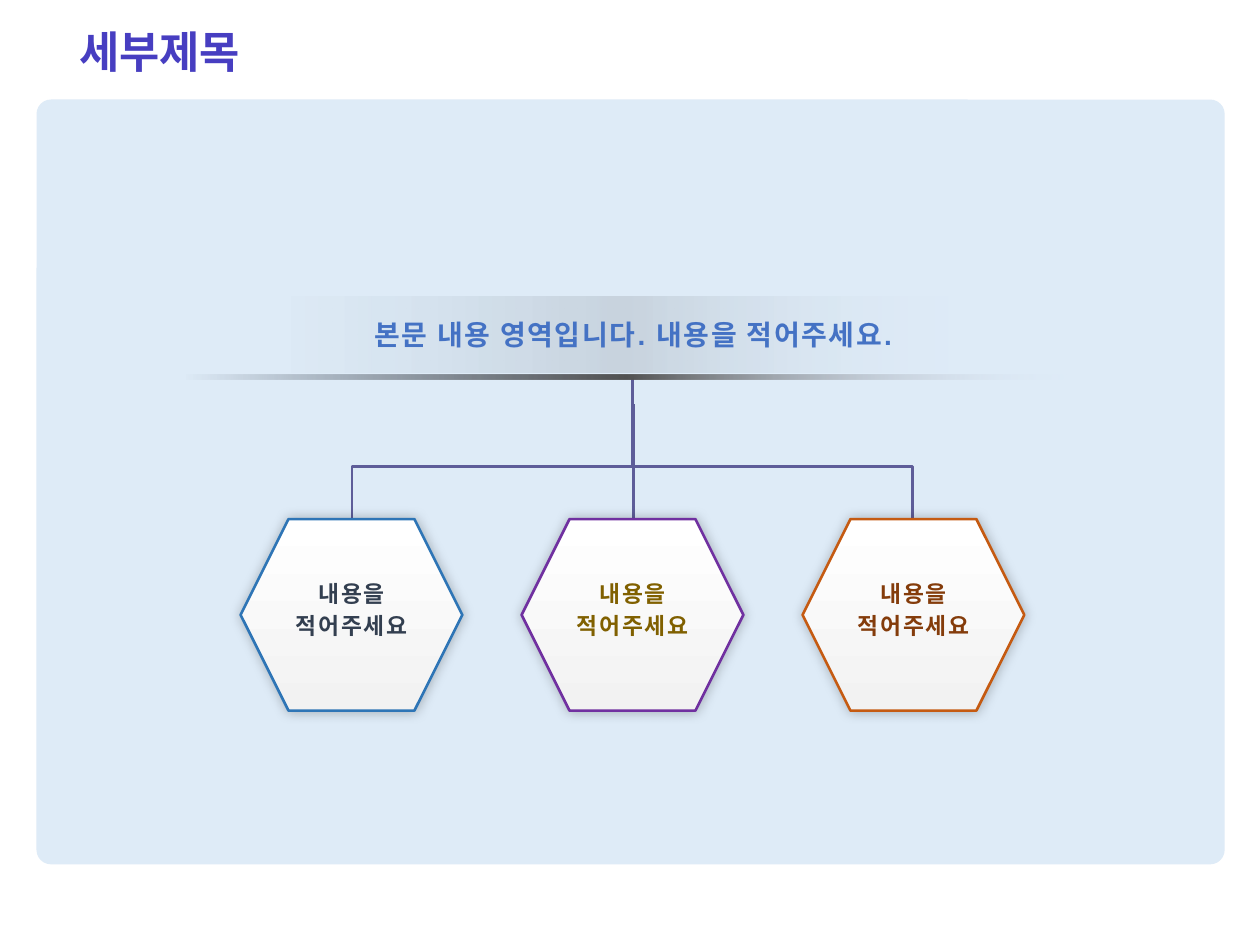
"""Build a slide where one headline branches into three hexagons."""
from dataclasses import dataclass

from pptx import Presentation
from pptx.dml.color import RGBColor
from pptx.enum.shapes import MSO_CONNECTOR, MSO_SHAPE
from pptx.enum.text import MSO_ANCHOR, MSO_AUTO_SIZE, PP_ALIGN
from pptx.oxml import parse_xml
from pptx.oxml.ns import nsdecls, qn
from pptx.oxml.xmlchemy import OxmlElement
from pptx.util import Inches, Pt

PANEL = RGBColor(0xDE, 0xEB, 0xF7)
TITLE = RGBColor(0x47, 0x3E, 0xC1)
BRANCH = RGBColor(0x5E, 0x5D, 0x99)
HEADLINE = RGBColor(0x44, 0x72, 0xC4)
NAVY = RGBColor(0x33, 0x3F, 0x50)
BLACK = RGBColor(0x00, 0x00, 0x00)
GRAY = RGBColor(0x52, 0x52, 0x52)
PALE = RGBColor(0xE1, 0xEB, 0xFB)
WHITE = RGBColor(0xFF, 0xFF, 0xFF)
SILVER = RGBColor(0xF2, 0xF2, 0xF2)
BLUE = RGBColor(0x2E, 0x75, 0xB6)
PURPLE = RGBColor(0x70, 0x30, 0xA0)
ORANGE = RGBColor(0xC5, 0x5A, 0x11)
OLIVE = RGBColor(0x80, 0x60, 0x00)
BROWN = RGBColor(0x84, 0x3C, 0x0B)

HEXAGON_LEFT, HEXAGON_PITCH = 1.91, 2.23
LABEL_LINES = ["내용을", "적어주세요"]


@dataclass(frozen=True)
class Stop:
    position: int
    color: RGBColor
    opacity: int = 100


@dataclass(frozen=True)
class Branch:
    begin: tuple[float, float]
    end: tuple[float, float]
    rotation: int
    bend: float


@dataclass(frozen=True)
class Topic:
    outline: RGBColor
    text: RGBColor


BRANCHES = [
    Branch((4.94, 5.3), (7.32, 3.08), 270, 0.704),
    Branch((5.1, 5.31), (2.72, 3.08), 90, 0.707),
]
TOPICS = [Topic(BLUE, NAVY), Topic(PURPLE, OLIVE), Topic(ORANGE, BROWN)]


def color_xml(color: RGBColor, opacity: int) -> str:
    return f'<a:srgbClr val="{color}"><a:alpha val="{opacity * 1000}"/></a:srgbClr>'


def add_box(slide, kind, left: float, top: float, width: float, height: float):
    shape = slide.shapes.add_shape(
        kind, Inches(left), Inches(top), Inches(width), Inches(height))
    shape.shadow.inherit = False
    shape.fill.background()
    shape.line.fill.background()
    return shape


def set_gradient(shape, stops: list[Stop], angle: int) -> None:
    stop_xml = "".join(
        f'<a:gs pos="{stop.position * 1000}">{color_xml(stop.color, stop.opacity)}</a:gs>'
        for stop in stops)
    gradient = parse_xml(
        f'<a:gradFill {nsdecls("a")} rotWithShape="1"><a:gsLst>{stop_xml}</a:gsLst>'
        f'<a:lin ang="{angle * 60000}" scaled="0"/></a:gradFill>')
    properties = shape._element.spPr
    properties.replace(properties.find(qn("a:noFill")), gradient)


def add_glow(shape) -> None:
    shape._element.spPr.find(qn("a:effectLst")).append(parse_xml(
        f'<a:outerShdw {nsdecls("a")} blurRad="{Pt(7)}" dist="0" dir="0" '
        f'algn="ctr" rotWithShape="0">{color_xml(BLACK, 25)}</a:outerShdw>'))


def add_line(slide, kind, begin: tuple[float, float], end: tuple[float, float]):
    connector = slide.shapes.add_connector(
        kind, *(Inches(value) for value in (*begin, *end)))
    connector.line.color.rgb = BRANCH
    connector.line.width = Pt(1.5)
    connector._element.spPr.append(OxmlElement("a:effectLst"))
    return connector


def add_branch(slide, branch: Branch) -> None:
    connector = add_line(slide, MSO_CONNECTOR.ELBOW, branch.begin, branch.end)
    properties = connector._element.spPr
    properties.find(qn("a:xfrm")).set("rot", str(branch.rotation * 60000))
    guide = OxmlElement("a:gd")
    guide.set("name", "adj1")
    guide.set("fmla", f"val {round(branch.bend * 100000)}")
    properties.find(qn("a:prstGeom")).get_or_add_avLst().append(guide)


def add_text(slide, lines: list[str], left: float, top: float, width: float,
             height: float, size: int, color: RGBColor, spacing=None) -> None:
    box = slide.shapes.add_textbox(
        Inches(left), Inches(top), Inches(width), Inches(height))
    frame = box.text_frame
    frame.word_wrap = True
    frame.auto_size = MSO_AUTO_SIZE.SHAPE_TO_FIT_TEXT
    frame.text = "\n".join(lines)
    for paragraph in frame.paragraphs:
        paragraph.alignment = PP_ALIGN.CENTER
        paragraph.line_spacing = spacing
        paragraph.font.name = "Arial"
        paragraph.font.size = Pt(size)
        paragraph.font.bold = True
        paragraph.font.color.rgb = color
        for run in paragraph.runs:
            run._r.get_or_add_rPr().set("spc", "100")


def add_title(slide, text: str) -> None:
    title = slide.shapes.title
    title.left, title.top = Inches(0.53), Inches(0)
    title.width, title.height = Inches(8.62), Inches(0.86)
    title.text_frame.text = text
    title.text_frame.vertical_anchor = MSO_ANCHOR.MIDDLE
    paragraph = title.text_frame.paragraphs[0]
    paragraph.alignment = PP_ALIGN.LEFT
    paragraph.line_spacing = 0.9
    paragraph.font.name = "Calibri"
    paragraph.font.size = Pt(25)
    paragraph.font.bold = True
    paragraph.font.color.rgb = TITLE


def main() -> None:
    presentation = Presentation()
    presentation.slide_width, presentation.slide_height = Inches(10), Inches(7.5)
    slide = presentation.slides.add_slide(presentation.slide_layouts[5])

    panel = add_box(slide, MSO_SHAPE.ROUNDED_RECTANGLE, 0.29, 0.79, 9.43, 6.07)
    panel.adjustments[0] = 0.019
    panel.fill.solid()
    panel.fill.fore_color.rgb = PANEL
    add_title(slide, "세부제목")

    for branch in BRANCHES:
        add_branch(slide, branch)
    add_line(slide, MSO_CONNECTOR.STRAIGHT, (5.03, 3.21), (5.03, 4.6))

    band = add_box(slide, MSO_SHAPE.RECTANGLE, 2.26, 2.35, 5.42, 0.61)
    set_gradient(band, [Stop(0, NAVY, 0), Stop(50, BLACK, 10), Stop(100, PALE, 0)], 0)

    for index, topic in enumerate(TOPICS):
        left = HEXAGON_LEFT + index * HEXAGON_PITCH
        hexagon = add_box(slide, MSO_SHAPE.HEXAGON, left, 4.12, 1.76, 1.52)
        set_gradient(hexagon, [Stop(0, WHITE), Stop(100, SILVER)], 90)
        hexagon.line.color.rgb = topic.outline
        hexagon.line.width = Pt(1.5)
        add_glow(hexagon)
        add_text(slide, LABEL_LINES, left + 0.02, 4.52, 1.72, 0.61, 13,
                 topic.text, Pt(18))

    underline = add_box(slide, MSO_SHAPE.RECTANGLE, 1.47, 2.97, 7, 0.04)
    set_gradient(underline, [Stop(0, NAVY, 0), Stop(50, GRAY), Stop(100, PALE, 0)], 0)
    add_text(slide, ["본문 내용 영역입니다. 내용을 적어주세요."],
             1.79, 2.47, 6.47, 0.37, 16, HEADLINE)
    presentation.save("out.pptx")


if __name__ == "__main__":
    main()
